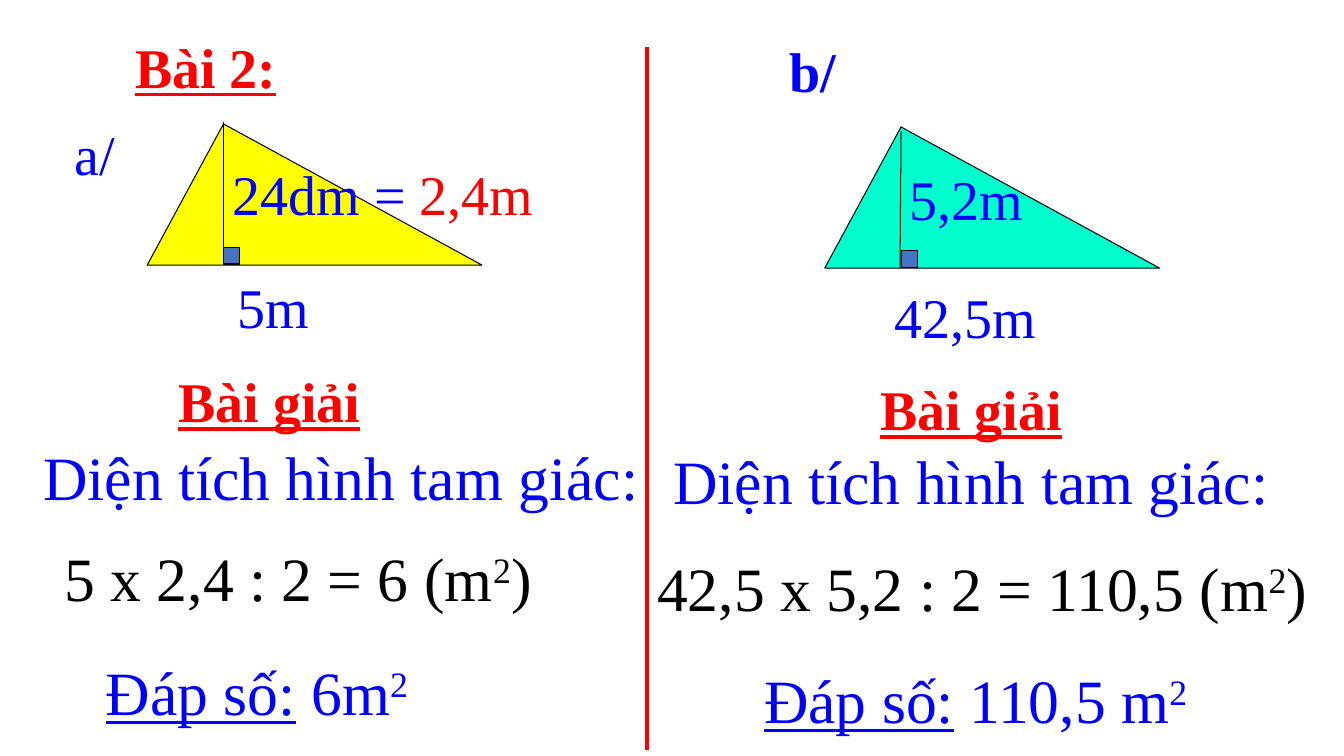
import pptx
import pptx.util
import pptx.dml.color
import pptx.enum.shapes
import pptx.enum.text
import pptx.oxml
import pptx.oxml.ns

Inches = pptx.util.Inches
Pt = pptx.util.Pt
SHAPE = pptx.enum.shapes.MSO_SHAPE
BLUE, RED, BLACK = "0000FF", "FF0000", "000000"
HEAD = {"size": 40, "color": RED, "bold": True, "underline": True}
LABEL = {"size": 40, "color": BLUE}
BODY = {"size": 44, "color": BLUE}
MATH = {"size": 44, "color": BLACK}
RAISED = {"raised": True}


def rgb(color):
    return pptx.dml.color.RGBColor.from_string(color)


def style(run, form):
    """Apply a dict of format values to one run."""
    font = run.font
    font.name = "Times New Roman"
    for name, value in form.items():
        if name == "color":
            font.color.rgb = rgb(value)
        elif name == "size":
            font.size = Pt(value)
        elif name == "raised":
            font._element.set("baseline", "30000")
        else:
            setattr(font, name, value)


def write(shape, runs, form):
    """Fill a shape with runs: pairs of text and changes to the base format."""
    frame = shape.text_frame
    values = {
        "word_wrap": True,
        "auto_size": pptx.enum.text.MSO_AUTO_SIZE.SHAPE_TO_FIT_TEXT,
        "vertical_anchor": pptx.enum.text.MSO_ANCHOR.TOP,
    }
    for name, value in values.items():
        setattr(frame, name, value)
    para = frame.paragraphs[0]
    para.alignment = pptx.enum.text.PP_ALIGN.LEFT
    space = pptx.oxml.parse_xml(
        f'<a:spcBef {pptx.oxml.ns.nsdecls("a")}><a:spcPct val="50000"/></a:spcBef>')
    para._p.get_or_add_pPr().insert(0, space)
    for text, change in runs:
        run = para.add_run()
        run.text = text
        style(run, {**form, **change})


def place(shape, left, top, width, height):
    box = {"left": left, "top": top, "width": width, "height": height}
    for name, value in box.items():
        setattr(shape, name, Inches(value))


def add_text(slide, left, top, width, runs, form):
    height = 0.84 if form["size"] == 44 else 0.77
    box = slide.shapes.add_textbox(*map(Inches, (left, top, width, height)))
    write(box, runs, form)


def add_form(slide, kind, box, fill):
    shape = slide.shapes.add_shape(kind, *map(Inches, box))
    shape.shadow.inherit = False
    shape.fill.solid()
    shape.fill.fore_color.rgb = rgb(fill)
    shape.line.color.rgb = rgb(BLACK)
    shape.line.width = Pt(0.75)
    return shape


def add_line(slide, start, end, color, width):
    line = slide.shapes.add_connector(
        pptx.enum.shapes.MSO_CONNECTOR.STRAIGHT, *map(Inches, (*start, *end)))
    line.line.color.rgb = rgb(color)
    line.line.width = Pt(width)
    line._element.spPr.append(pptx.oxml.parse_xml(
        f'<a:effectLst {pptx.oxml.ns.nsdecls("a")}/>'))


def add_figure(slide, left, top, fill, rise, lean):
    """Triangle with its height line (top offset rise, foot shift lean)."""
    width, height, peak, mark = 3.32, 1.4, 0.228, 0.16
    body = add_form(slide, SHAPE.ISOSCELES_TRIANGLE,
                    (left, top, width, height), fill)
    body.adjustments[0] = peak
    foot, base = left + peak * width, top + height
    add_line(slide, (foot, top + rise), (foot + lean, base), BLACK, 0.75)
    add_form(slide, SHAPE.RECTANGLE,
             (foot, base - mark - 0.01, mark, mark), "4472C4")


def add_half(slide, left, top, figure, texts):
    """One problem: its figure and texts, offset from the half's corner."""
    x, y, *rest = figure
    add_figure(slide, left + x, top + y, *rest)
    for x, y, width, runs, form in texts:
        add_text(slide, left + x, top + y, width, runs, form)


def solve(sum_at, sum_text, answer_at, answer):
    """The worked sum and the answer line, each at (x, y, width)."""
    return [
        (*sum_at, [(sum_text, {}), ("2", RAISED), (")", {})], MATH),
        (*answer_at, [("Đáp số:", {"underline": True}),
                      (answer, {}), ("2", RAISED)], BODY),
    ]


def main():
    deck = pptx.Presentation()
    deck.slide_width, deck.slide_height = Inches(13.33), Inches(7.5)
    slide = deck.slides.add_slide(deck.slide_layouts[5])
    title = slide.shapes.title
    place(title, 1.24, 0.27, 1.89, 0.77)
    write(title, [("Bài 2:", {})], HEAD)

    solution = [("Bài giải", {})]
    area = [("Diện tích hình tam giác:", {})]
    add_half(slide, 0, 0, (1.46, 1.23, "FFFF00", -0.02, 0), [
        (0.64, 1.14, 0.63, [("a/", {})], LABEL),
        (2.21, 1.53, 3.43, [("24dm = ", {}), ("2,4m", {"color": RED})], LABEL),
        (2.26, 2.65, 1, [("5m", {})], LABEL),
        (1.67, 3.59, 2.41, solution, HEAD),
        (0.33, 4.31, 6.27, area, BODY),
        *solve((0.54, 5.31, 5.01), "5 x 2,4 : 2 = 6 (m",
               (0.95, 6.44, 3.75), " 6m"),
    ])
    middle = 6.42
    add_half(slide, middle, 0, (1.76, 1.26, "00FFCC", 0.04, -0.01), [
        (1.31, 0.31, 0.94, [("b/", {})], {**LABEL, "bold": True}),
        (2.5, 1.58, 1.57, [("5,2m", {})], LABEL),
        (2.35, 2.75, 1.89, [("42,5m", {})], LABEL),
        (2.21, 3.67, 2.41, solution, HEAD),
        (0.16, 4.35, 6.39, area, BODY),
        *solve((0, 5.41, 6.97), "42,5 x 5,2 : 2 = 110,5 (m",
               (1.06, 6.52, 4.46), " 110,5 m"),
    ])
    add_line(slide, (middle, 0.47), (middle, 7.44), RED, 3)
    deck.save("out.pptx")


if __name__ == "__main__":
    main()
